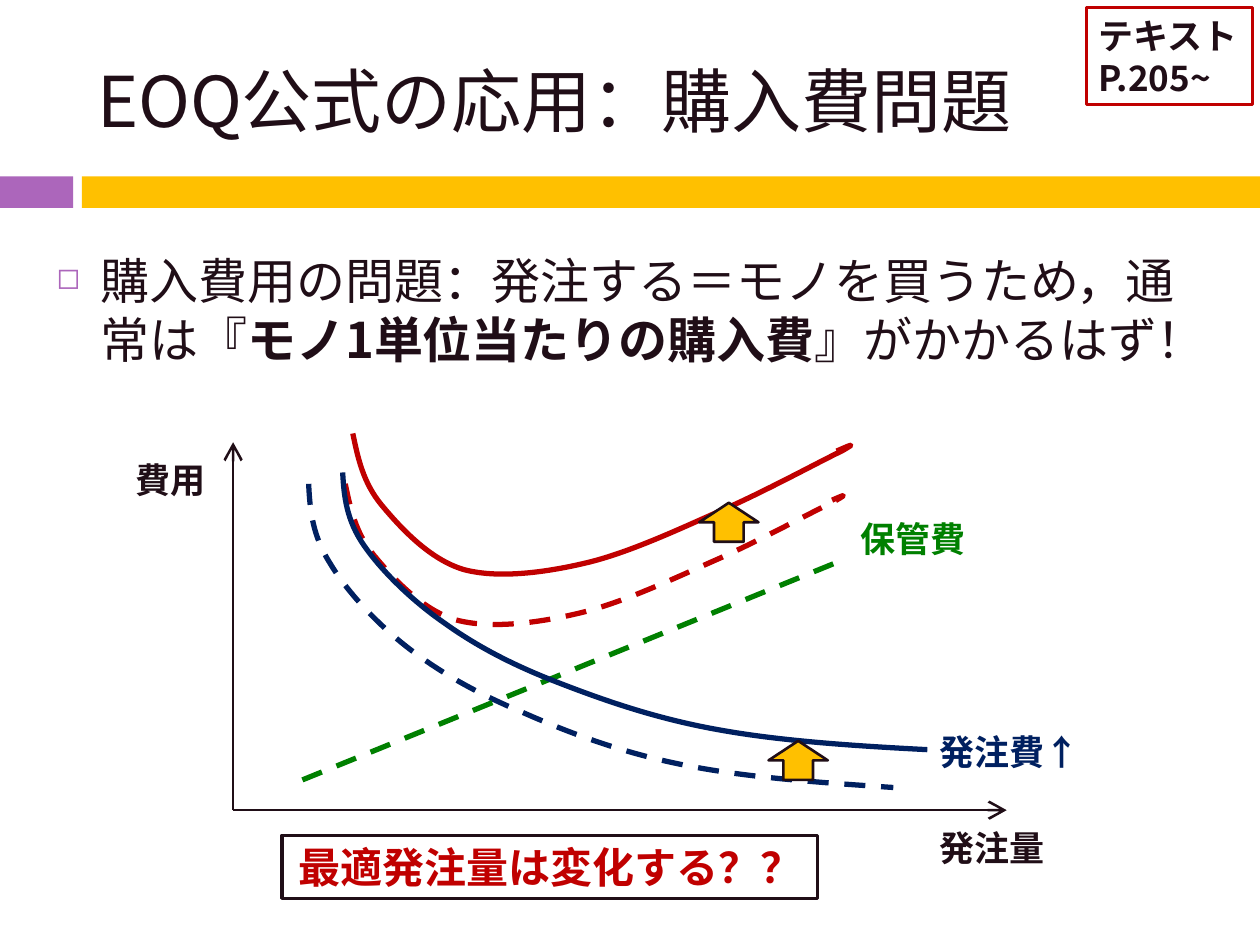
from lxml.etree import SubElement
from pptx import Presentation
from pptx.dml.color import RGBColor
from pptx.enum.dml import MSO_LINE
from pptx.enum.shapes import MSO_CONNECTOR, MSO_SHAPE
from pptx.enum.text import MSO_ANCHOR, MSO_AUTO_SIZE, PP_ALIGN
from pptx.oxml.ns import qn
from pptx.util import Inches, Pt

FONT = "Noto Sans CJK JP"
INK = RGBColor(0x20, 0x0E, 0x17)
PURPLE = RGBColor(0xAC, 0x66, 0xBB)
AMBER = RGBColor(0xFF, 0xC0, 0x00)
NAVY = RGBColor(0x00, 0x20, 0x60)
GREEN = RGBColor(0x00, 0x80, 0x00)
RED = RGBColor(0xC0, 0x00, 0x00)

ORDER_COST_BEFORE = [
    (2.45, 3.84), (2.46, 4.05), (2.48, 4.25), (2.62, 4.47), (2.75, 4.69), (2.99, 4.95),
    (3.25, 5.15), (3.5, 5.34), (3.78, 5.5), (4.14, 5.65), (4.5, 5.81), (4.92, 5.97),
    (5.42, 6.07), (5.91, 6.17), (6.5, 6.21), (7.09, 6.25)]
ORDER_COST_AFTER = [
    (2.72, 3.75), (2.73, 3.94), (2.75, 4.13), (2.89, 4.33), (3.02, 4.52), (3.26, 4.76),
    (3.52, 4.94), (3.77, 5.12), (4.05, 5.27), (4.41, 5.41), (4.77, 5.55), (5.19, 5.7),
    (5.69, 5.79), (6.18, 5.88), (6.77, 5.92), (7.36, 5.95)]
TOTAL_COST_BEFORE = [
    (2.74, 3.84), (2.78, 4.03), (2.82, 4.23), (2.97, 4.41), (3.12, 4.59), (3.35, 4.84),
    (3.62, 4.92), (3.88, 4.99), (4.24, 4.95), (4.58, 4.87), (4.93, 4.79), (5.35, 4.59),
    (5.69, 4.44), (6.03, 4.29), (6.47, 4.05), (6.62, 3.98), (6.76, 3.9), (6.67, 3.94),
    (6.58, 3.98)]
TOTAL_COST_SHIFT = (0.06, -0.4)


def add_run(paragraph, text, size, color=INK, bold=False):
    """Append a run with the slide font for Latin and Japanese text."""
    run = paragraph.add_run()
    run.text = text
    run.font.name = FONT
    run.font.size = Pt(size)
    run.font.bold = bold
    run.font.color.rgb = color
    SubElement(run.font._element, qn("a:ea"), typeface=FONT)


def add_box(slide, box, fill=None, line=None, width=1.5, kind=MSO_SHAPE.RECTANGLE):
    """Add a preset shape with an optional fill and outline."""
    shape = slide.shapes.add_shape(kind, *map(Inches, box))
    shape.shadow.inherit = False
    if fill is None:
        shape.fill.background()
    else:
        shape.fill.solid()
        shape.fill.fore_color.rgb = fill
    if line is None:
        shape.line.fill.background()
    else:
        shape.line.color.rgb = line
        shape.line.width = Pt(width)
    return shape


def add_framed_text(slide, box, lines, size, color, frame, width, align):
    """Add an outlined box with one bold paragraph per line."""
    text_frame = add_box(slide, box, line=frame, width=width).text_frame
    text_frame.word_wrap = False
    text_frame.vertical_anchor = MSO_ANCHOR.MIDDLE
    for index, text in enumerate(lines):
        paragraph = text_frame.add_paragraph() if index else text_frame.paragraphs[0]
        paragraph.alignment = align
        add_run(paragraph, text, size, color, True)


def add_label(slide, box, text, color):
    """Add a bold chart label."""
    text_frame = slide.shapes.add_textbox(*map(Inches, box)).text_frame
    text_frame.word_wrap = True
    add_run(text_frame.paragraphs[0], text, 20, color, True)


def add_line(slide, start, end, color, width, dashed=False, arrow=False):
    """Add a straight connector, dashed or with an arrowhead on request."""
    connector = slide.shapes.add_connector(
        MSO_CONNECTOR.STRAIGHT, *map(Inches, (*start, *end)))
    connector.line.color.rgb = color
    connector.line.width = Pt(width)
    if dashed:
        connector.line.dash_style = MSO_LINE.DASH
    if arrow:
        SubElement(connector.line._get_or_add_ln(), qn("a:tailEnd"),
                   type="arrow", w="lg", len="lg")
    SubElement(connector._element.spPr, qn("a:effectLst"))


def add_curve(slide, points, color, dashed=False):
    """Add a smooth open curve through cubic Bezier control points."""
    vertices = [(Inches(x), Inches(y)) for x, y in points]
    builder = slide.shapes.build_freeform(*vertices[0])
    builder.add_line_segments(vertices[1:], close=False)
    shape = builder.convert_to_shape()
    shape.shadow.inherit = False
    shape.fill.background()
    shape.line.color.rgb = color
    shape.line.width = Pt(3)
    if dashed:
        shape.line.dash_style = MSO_LINE.DASH
    outline = next(shape._element.iter(qn("a:path")))
    segments = outline.findall(qn("a:lnTo"))
    for first in range(0, len(segments), 3):
        bezier = SubElement(outline, qn("a:cubicBezTo"))
        for segment in segments[first:first + 3]:
            bezier.append(segment[0])
            outline.remove(segment)


def add_heading(slide, box):
    """Place the title and the two-coloured band below it."""
    left, top, width, height = box
    add_box(slide, (0, 1.4, 0.58, 0.25), PURPLE)
    add_box(slide, (0.65, 1.4, 9.35, 0.25), AMBER)
    title = slide.shapes.title
    title.left, title.top = Inches(left), Inches(top)
    title.width, title.height = Inches(width), Inches(height)
    title.text_frame.auto_size = MSO_AUTO_SIZE.NONE
    title.text_frame.vertical_anchor = MSO_ANCHOR.MIDDLE
    paragraph = title.text_frame.paragraphs[0]
    paragraph.alignment = PP_ALIGN.LEFT
    add_run(paragraph, "EOQ公式の応用：購入費問題", 40)


def add_body(slide, box):
    """Place the bulleted statement of the purchase cost problem."""
    text_frame = slide.shapes.add_textbox(*map(Inches, box)).text_frame
    text_frame.word_wrap = True
    paragraph = text_frame.paragraphs[0]
    paragraph.space_before = Pt(7)
    properties = paragraph._p.get_or_add_pPr()
    properties.set("marL", str(Inches(0.35)))
    properties.set("indent", str(Inches(-0.35)))
    bullet_color = SubElement(properties, qn("a:buClr"))
    SubElement(bullet_color, qn("a:srgbClr"), val=str(PURPLE))
    SubElement(properties, qn("a:buSzPct"), val="60000")
    SubElement(properties, qn("a:buChar"), char="◻")
    add_run(paragraph, "購入費用の問題：発注する＝モノを買うため，通常は『", 28)
    add_run(paragraph, "モノ1単位当たりの購入費", 28, bold=True)
    add_run(paragraph, "』がかかるはず！", 28)


def add_cost_graph(slide, box):
    """Draw the cost curves over order quantity, with axes filling the box."""
    left, top, width, height = box
    origin = (left, top + height)
    add_line(slide, origin, (left, top), INK, 1.5, arrow=True)
    add_line(slide, origin, (left + width, top + height), INK, 1.5, arrow=True)
    add_label(slide, (left - 0.87, top + 0.08, 0.79, 0.44), "費用", INK)
    add_label(slide, (left + 5.51, top + 3, 1.18, 0.44), "発注量", INK)
    add_label(slide, (left + 5.51, top + 2.24, 1.34, 0.44), "発注費↑", NAVY)
    add_label(slide, (left + 4.88, top + 0.55, 1.18, 0.44), "保管費", GREEN)
    add_curve(slide, ORDER_COST_BEFORE, NAVY, dashed=True)
    add_line(slide, (left + 0.55, top + 2.68), (left + 4.8, top + 0.95), GREEN, 3, dashed=True)
    add_curve(slide, TOTAL_COST_BEFORE, RED, dashed=True)
    shift_x, shift_y = TOTAL_COST_SHIFT
    add_curve(slide, [(x + shift_x, y + shift_y) for x, y in TOTAL_COST_BEFORE], RED)
    add_curve(slide, ORDER_COST_AFTER, NAVY)
    for x, y in ((4.25, 2.37), (3.7, 0.48)):
        add_box(slide, (left + x, top + y, 0.47, 0.31), AMBER, INK, kind=MSO_SHAPE.UP_ARROW)


def main():
    """Build the slide and save it."""
    presentation = Presentation()
    presentation.slide_width, presentation.slide_height = Inches(10), Inches(7.5)
    slide = presentation.slides.add_slide(presentation.slide_layouts[5])
    add_heading(slide, (0.67, 0.25, 8.92, 1.08))
    add_body(slide, (0.35, 1.94, 9.37, 5.35))
    add_cost_graph(slide, (1.85, 3.51, 6.14, 2.92))
    add_framed_text(slide, (2.24, 6.63, 4.25, 0.5), ["最適発注量は変化する？？"],
                    24, RED, INK, 2, PP_ALIGN.CENTER)
    add_framed_text(slide, (8.62, 0.06, 1.32, 0.77), ["テキスト", "P.205~"],
                    20, INK, RED, 1.75, PP_ALIGN.LEFT)
    presentation.save("out.pptx")


if __name__ == "__main__":
    main()
